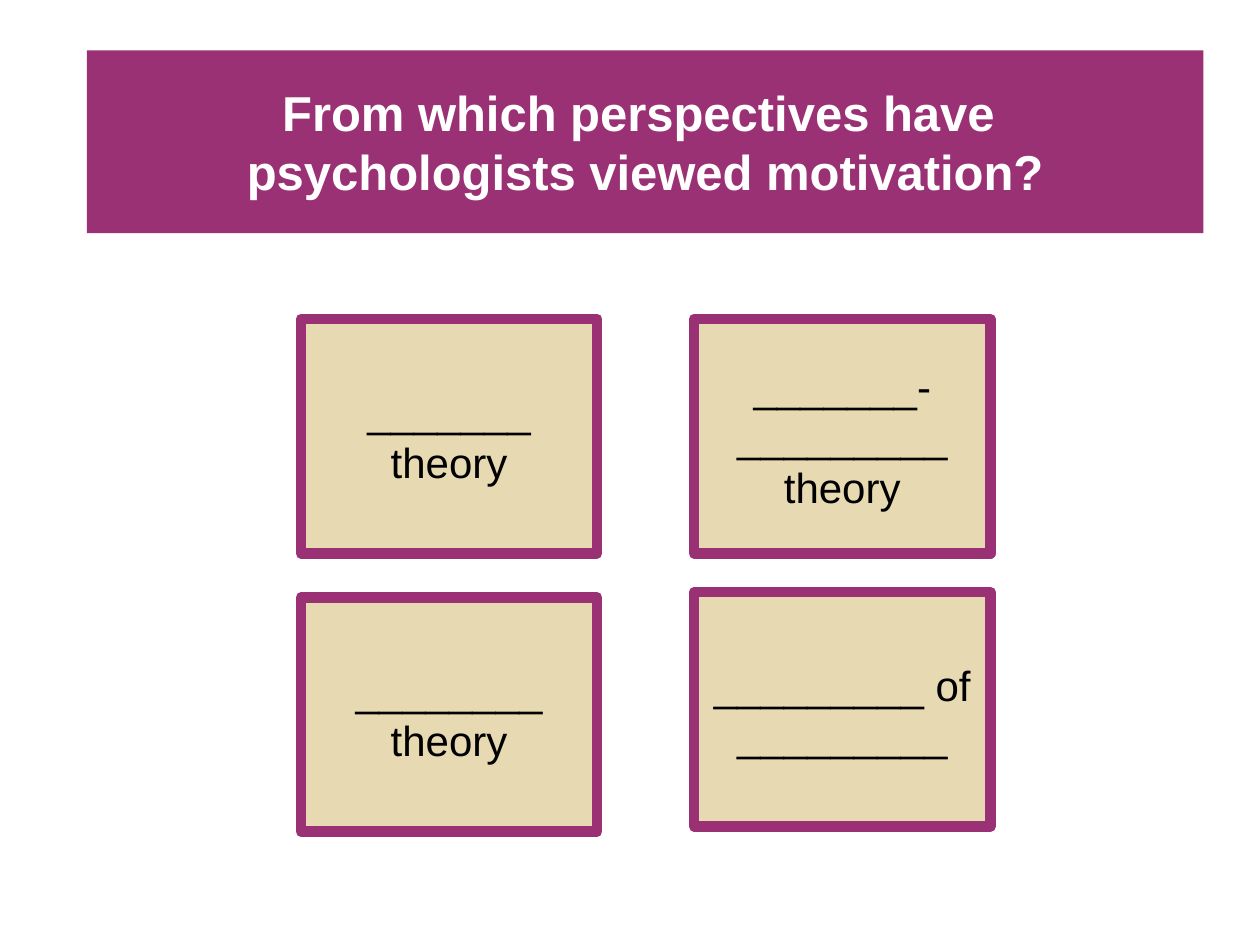
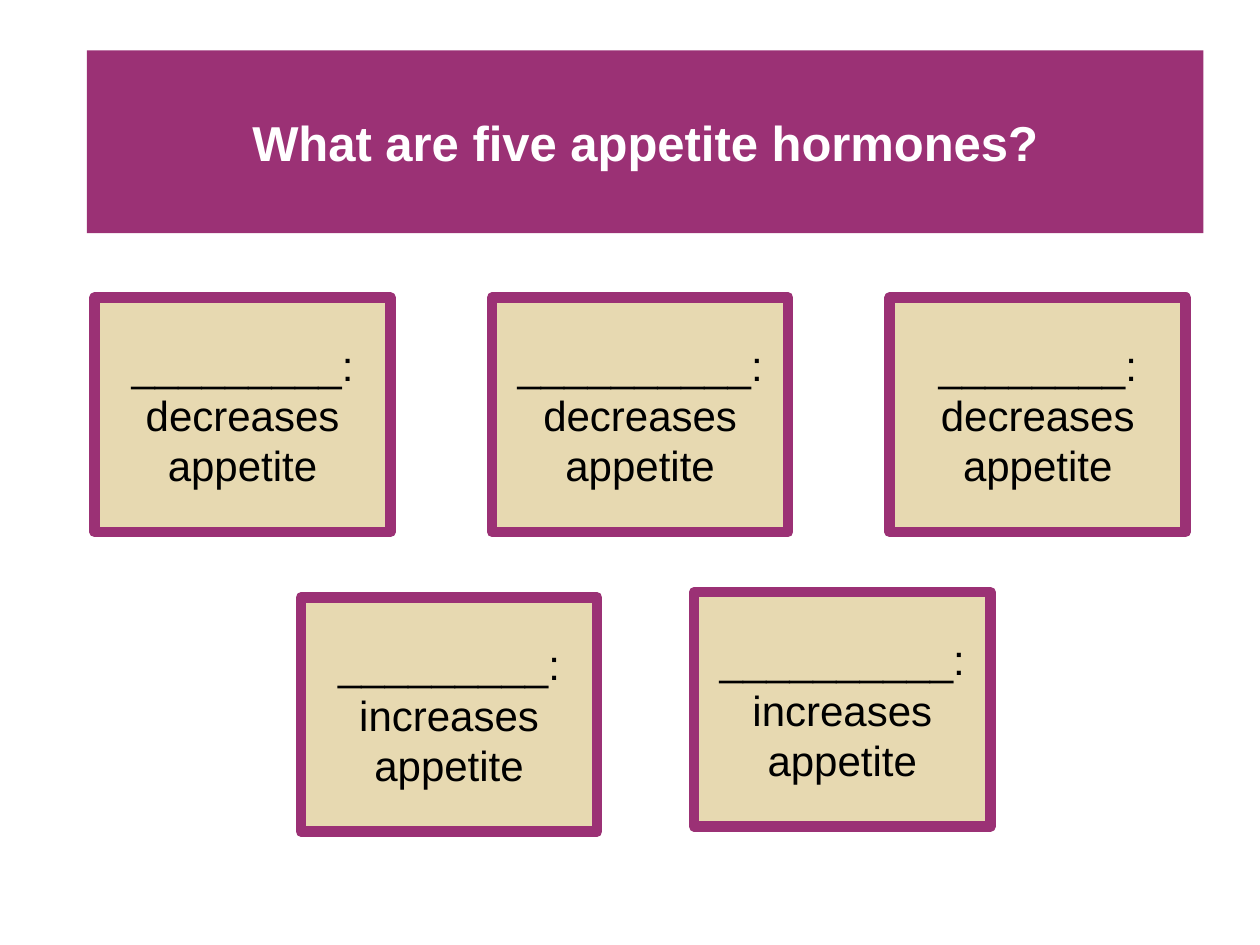
from dataclasses import dataclass

from pptx import Presentation
from pptx.dml.color import RGBColor
from pptx.enum import shapes, text
from pptx.util import Pt


@dataclass(frozen=True)
class Theme:
    plum: RGBColor = RGBColor(0x9B, 0x31, 0x75)
    sand: RGBColor = RGBColor(0xE7, 0xD9, 0xB1)
    white: RGBColor = RGBColor(0xFF, 0xFF, 0xFF)
    black: RGBColor = RGBColor(0, 0, 0)
    font: str = "Arial"
    question_size: int = 28
    answer_size: int = 24
    border: int = 6


theme = Theme()

# Card grid, in points
CARD_WIDTH, CARD_HEIGHT = 169.2, 134
pair_lefts = [172, 396.7]
trio_lefts = [54 + 227.2 * column for column in range(3)]
lower_row = list(zip(pair_lefts, [341.3, 338.4]))

# Each question with the card positions and the paragraphs on each card
questions = [
    (
        ["From which perspectives have ", "psychologists viewed motivation?"],
        [(left, 182.2) for left in pair_lefts] + lower_row,
        [
            ["_______", "theory"],
            ["_______-_________ theory"],
            ["________", "theory"],
            ["_________ of _________"],
        ],
    ),
    (
        ["What are five appetite hormones?"],
        [(left, 170) for left in trio_lefts] + lower_row,
        [
            ["_________: decreases appetite"],
            ["__________:", "decreases appetite"],
            ["________: decreases appetite"],
            ["_________: increases appetite"],
            ["__________: increases appetite"],
        ],
    ),
]


def prepare(frame):
    """Centre the text in its box and return the first paragraph."""
    frame.word_wrap = True
    frame.auto_size = text.MSO_AUTO_SIZE.NONE
    frame.vertical_anchor = text.MSO_ANCHOR.MIDDLE
    return frame.paragraphs[0]


def add_words(paragraph, words, size, colour, bold=False):
    """Add one formatted run to a centred paragraph."""
    paragraph.alignment = text.PP_ALIGN.CENTER
    run = paragraph.add_run()
    run.text = words
    run.font.name = theme.font
    run.font.size = Pt(size)
    run.font.bold = bold
    run.font.color.rgb = colour


deck = Presentation()
deck.slide_width, deck.slide_height = Pt(720), Pt(540)
title_only = deck.slide_layouts[5]

for question_lines, positions, answers in questions:
    slide = deck.slides.add_slide(title_only)

    # Question band
    question = slide.shapes.title
    question.left, question.top = Pt(49.7), Pt(28.8)
    question.width, question.height = Pt(638), Pt(104.4)
    question.fill.solid()
    question.fill.fore_color.rgb = theme.plum
    heading = prepare(question.text_frame)
    for number, line in enumerate(question_lines):
        if number:
            heading.add_line_break()
        add_words(heading, line, theme.question_size, theme.white, bold=True)

    # Answer cards
    for (left, top), answer in zip(positions, answers):
        card = slide.shapes.add_shape(
            shapes.MSO_SHAPE.RECTANGLE,
            Pt(left), Pt(top), Pt(CARD_WIDTH), Pt(CARD_HEIGHT),
        )
        card.shadow.inherit = False
        card.fill.solid()
        card.fill.fore_color.rgb = theme.sand
        card.line.color.rgb = theme.plum
        card.line.width = Pt(theme.border)
        paragraph = prepare(card.text_frame)
        for number, words in enumerate(answer):
            if number:
                paragraph = card.text_frame.add_paragraph()
            add_words(paragraph, words, theme.answer_size, theme.black)

deck.save("out.pptx")
